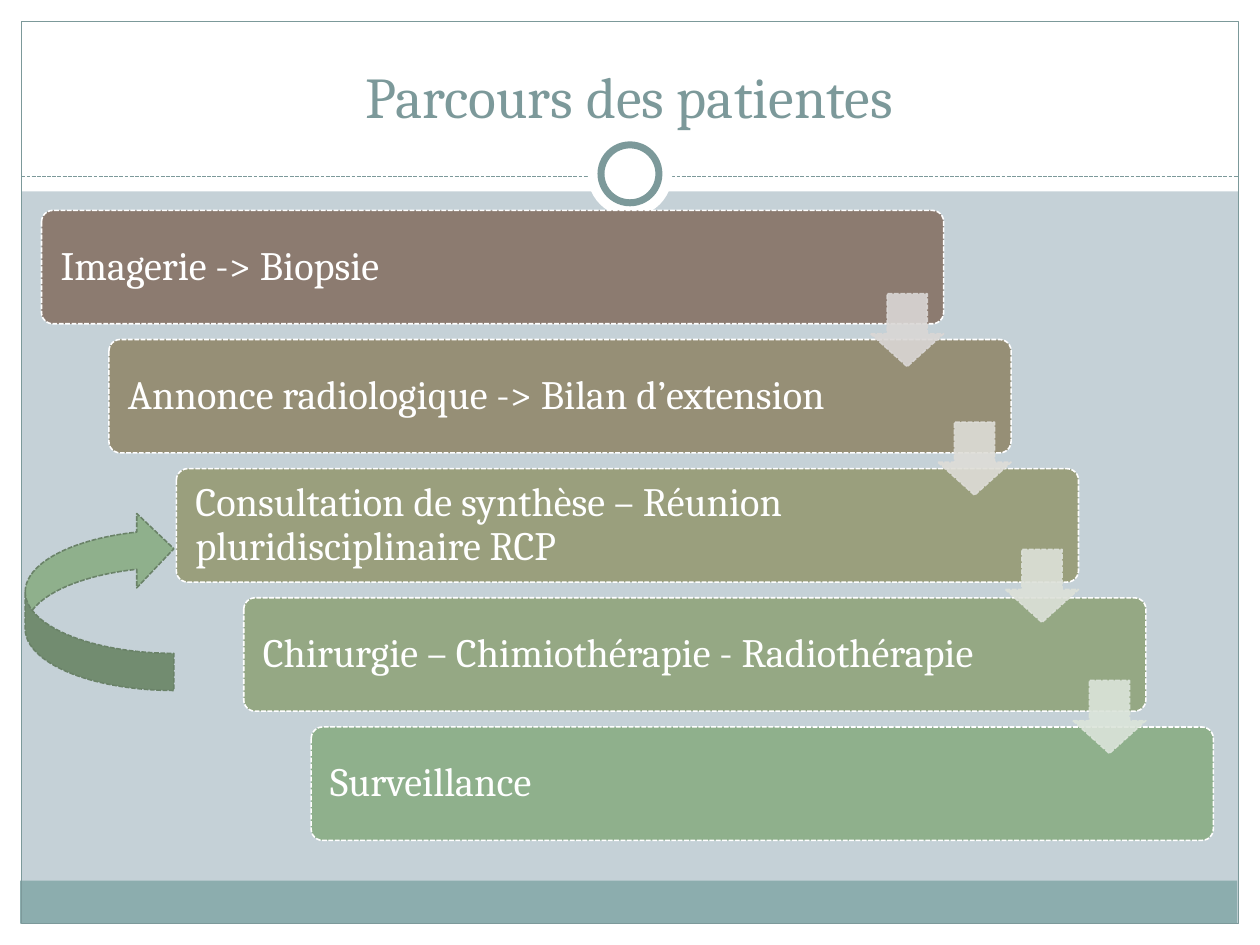
import lxml.etree
import pptx
import pptx.util
import pptx.dml.color
import pptx.enum.dml
import pptx.enum.shapes
import pptx.enum.text
import pptx.oxml.ns

RGBColor = pptx.dml.color.RGBColor
Pt = pptx.util.Pt
SHAPE = pptx.enum.shapes.MSO_SHAPE
DASH = pptx.enum.dml.MSO_LINE.SQUARE_DOT
qn = pptx.oxml.ns.qn

WHITE = RGBColor(0xFF, 0xFF, 0xFF)
MIST = RGBColor(0xC5, 0xD1, 0xD7)
TEAL = RGBColor(0x8C, 0xAD, 0xAE)
SLATE = RGBColor(0x7C, 0x99, 0x9A)
GREEN = RGBColor(0x8F, 0xB0, 0x8C)
DARK_GREEN = RGBColor(0x6A, 0x82, 0x68)

deck = pptx.Presentation()
deck.slide_width = pptx.util.Inches(10)
deck.slide_height = pptx.util.Inches(7.5)
COL = deck.slide_width / 100
ROW = deck.slide_height / 75

slide = deck.slides.add_slide(deck.slide_layouts[5])
slide.background.fill.solid()
slide.background.fill.fore_color.rgb = MIST


def add_block(kind, left, top, width, height, fill=None, line=None, weight=0.9, dashed=False):
    block = slide.shapes.add_shape(
        kind, int(left * COL), int(top * ROW), int(width * COL), int(height * ROW))
    block.shadow.inherit = False
    if fill is None:
        block.fill.background()
    else:
        block.fill.solid()
        block.fill.fore_color.rgb = fill
    if line is None:
        block.line.fill.background()
    else:
        block.line.color.rgb = line
        block.line.width = Pt(weight)
        if dashed:
            block.line.dash_style = DASH
    return block


def style_text(frame, size, color, alignment):
    paragraph = frame.paragraphs[0]
    paragraph.alignment = alignment
    font = paragraph.runs[0].font
    font.name = "Cambria"
    font.size = Pt(size)
    font.color.rgb = color


for left, top, width, height in [
    (0, 73.3, 100, 1.7), (0, 0, 100, 15.2), (0, 0, 1.7, 75), (98.3, 0, 1.7, 75),
]:
    add_block(SHAPE.RECTANGLE, left, top, width, height, WHITE)
add_block(SHAPE.RECTANGLE, 1.6, 69.9, 96.6, 3.4, TEAL)
add_block(SHAPE.RECTANGLE, 1.7, 1.7, 96.6, 71.6, line=SLATE, weight=0.75)

divider = slide.shapes.add_connector(
    pptx.enum.shapes.MSO_CONNECTOR.STRAIGHT,
    int(1.7 * COL), int(14 * ROW), int(98.3 * COL), int(14 * ROW))
divider.line.color.rgb = SLATE
divider.line.width = Pt(0.75)
divider.line.dash_style = DASH
lxml.etree.SubElement(divider._element.spPr, qn("a:effectLst"))

add_block(SHAPE.OVAL, 46.65, 10.5, 6.7, 6.7, WHITE)
add_block(SHAPE.OVAL, 47.7, 11.5, 4.6, 4.6, WHITE, SLATE, 4)

heading = slide.shapes.title
heading.left, heading.top = int(3.3 * COL), int(2.5 * ROW)
heading.width, heading.height = int(93.3 * COL), int(8.3 * ROW)
heading.text_frame.text = "Parcours des patientes"
heading.text_frame.vertical_anchor = pptx.enum.text.MSO_ANCHOR.BOTTOM
style_text(heading.text_frame, 33, SLATE, pptx.enum.text.PP_ALIGN.CENTER)
slide.shapes._spTree.append(heading._element)

steps = [
    ("Imagerie -> Biopsie", RGBColor(0x8C, 0x7B, 0x70)),
    ("Annonce radiologique -> Bilan d’extension", RGBColor(0x96, 0x8F, 0x76)),
    ("Consultation de synthèse – Réunion pluridisciplinaire RCP", RGBColor(0x9A, 0x9F, 0x7D)),
    ("Chirurgie – Chimiothérapie - Radiothérapie", RGBColor(0x95, 0xA8, 0x84)),
    ("Surveillance", GREEN),
]
for index, (label, color) in enumerate(steps):
    step = add_block(SHAPE.ROUNDED_RECTANGLE, 3.3 + 5.35 * index, 16.7 + 10.25 * index,
                     71.6, 9, color, WHITE, dashed=True)
    step.adjustments[0] = 0.1
    frame = step.text_frame
    frame.word_wrap = True
    frame.vertical_anchor = pptx.enum.text.MSO_ANCHOR.MIDDLE
    frame.margin_left = int(1.25 * COL)
    frame.margin_right = int(12.4 * COL)
    frame.margin_top = frame.margin_bottom = int(ROW)
    frame.text = label
    frame.paragraphs[0].line_spacing = 0.9
    style_text(frame, 23, WHITE, pptx.enum.text.PP_ALIGN.LEFT)

arrows = [
    (23.3, RGBColor(0xDA, 0xD7, 0xD5)),
    (33.5, RGBColor(0xDE, 0xDD, 0xD7)),
    (43.6, RGBColor(0xDD, 0xE1, 0xD9)),
    (54, RGBColor(0xDB, 0xE4, 0xDA)),
]
for index, (top, color) in enumerate(arrows):
    arrow = add_block(SHAPE.DOWN_ARROW, 69.1 + 5.35 * index, top, 5.8, 5.8,
                      color, color, dashed=True)
    arrow.adjustments[0] = 0.55
    arrow.adjustments[1] = 0.45
    for tint in arrow._element.spPr.iter(qn("a:srgbClr")):
        lxml.etree.SubElement(tint, qn("a:alpha")).set("val", "90000")

feedback = add_block(SHAPE.CURVED_LEFT_ARROW, 2, 40.6, 11.8, 14.2, GREEN, DARK_GREEN, dashed=True)
feedback.rotation = 180

deck.save("out.pptx")
